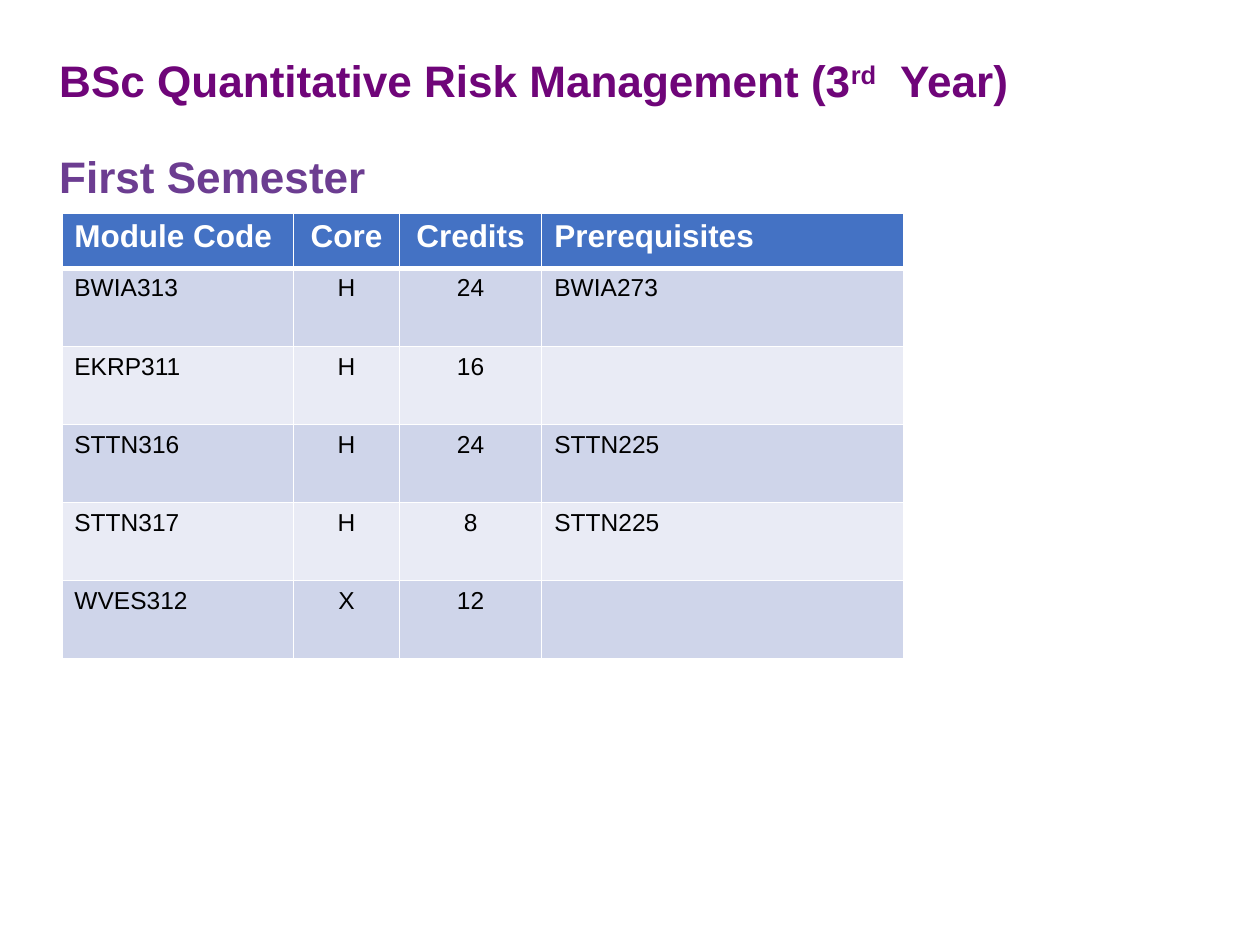
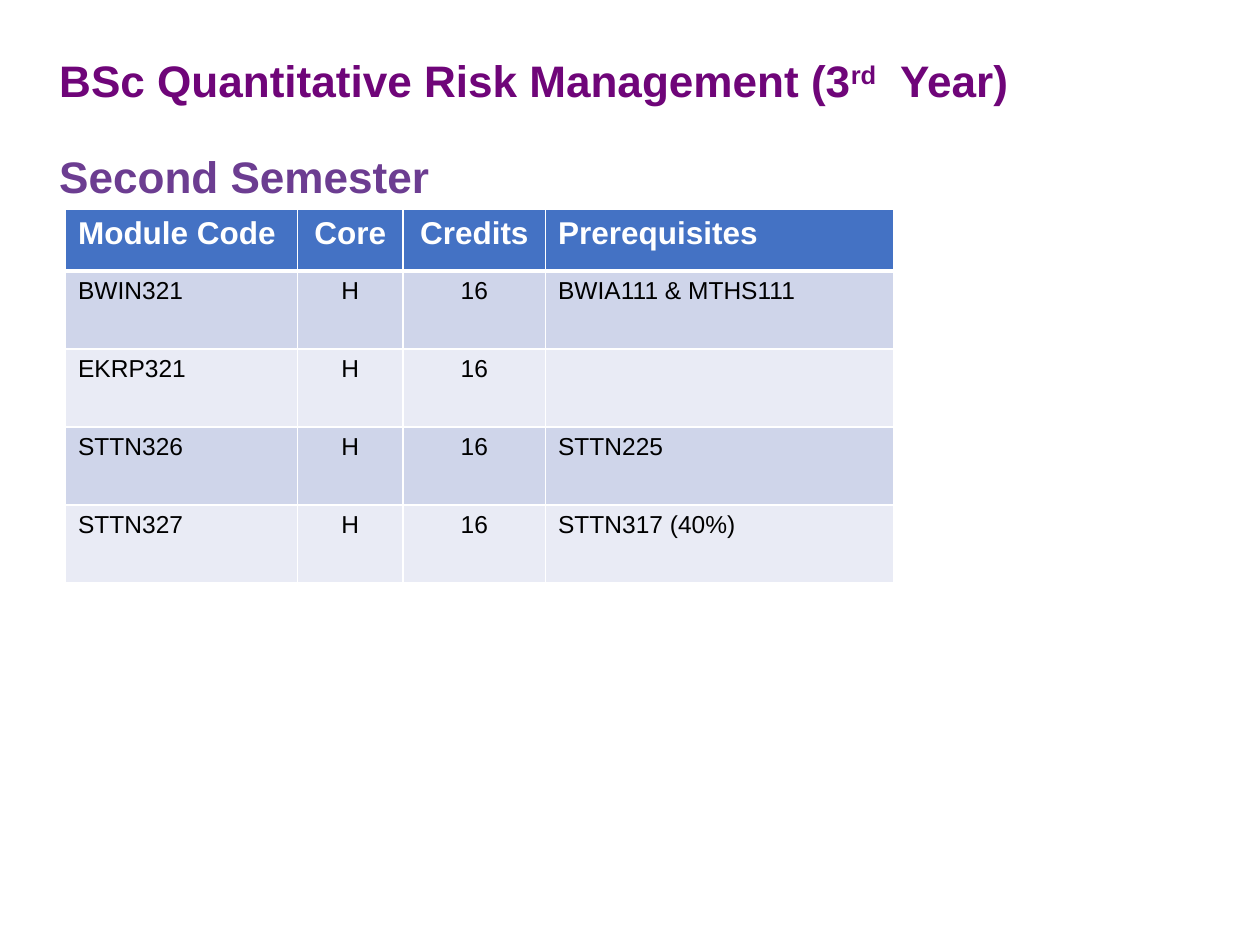
from dataclasses import dataclass

from lxml.etree import SubElement
from pptx import Presentation
from pptx.dml.color import RGBColor as Color
from pptx.enum.text import MSO_ANCHOR as Anchor, MSO_AUTO_SIZE as AutoSize, PP_ALIGN as Align
from pptx.oxml.ns import qn
from pptx.util import Inches, Pt


@dataclass(frozen=True)
class Theme:
    font: str = "Arial"
    title: str = "6F0579"
    semester: str = "6C3D91"
    header: str = "4472C4"
    bands: tuple = ("CFD5EA", "E9EBF5")
    white: str = "FFFFFF"
    black: str = "000000"
    title_size: float = 25.2
    header_size: int = 18
    body_size: int = 14
    rule: int = 1
    header_rule: int = 3


@dataclass(frozen=True)
class Box:
    left: float
    top: float
    width: float
    height: float

    def lengths(self):
        return [Inches(side) for side in (self.left, self.top, self.width, self.height)]


THEME = Theme()
TITLE_LAYOUT = 5
HEADINGS = ("Module Code", "Core", "Credits", "Prerequisites")
ALIGNMENTS = (Align.LEFT, Align.CENTER, Align.CENTER, Align.LEFT)
FIXED_WIDTHS = (1.84, 0.84, 1.13)
BODY_ROW = 0.62

FIRST_MODULES = (
    ("BWIA313", "H", "24", "BWIA273"),
    ("EKRP311", "H", "16", ""),
    ("STTN316", "H", "24", "STTN225"),
    ("STTN317", "H", "8", "STTN225"),
    ("WVES312", "X", "12", ""),
)
SECOND_MODULES = (
    ("BWIN321", "H", "16", "BWIA111 & MTHS111"),
    ("EKRP321", "H", "16", ""),
    ("STTN326", "H", "16", "STTN225"),
    ("STTN327", "H", "16", "STTN317 (40%)"),
)


def write(para, text, size, color, bold=False, align=Align.LEFT, raised=False):
    para.alignment = align
    span = para.add_run()
    span.text = text
    span.font.name = THEME.font
    span.font.size = Pt(size)
    span.font.bold = bold
    span.font.color.rgb = Color.from_string(color)
    if raised:
        span._r.get_or_add_rPr().set("baseline", "30000")


def set_borders(cell, bottom):
    properties = cell._tc.get_or_add_tcPr()
    widths = {"a:lnL": THEME.rule, "a:lnR": THEME.rule, "a:lnT": THEME.rule, "a:lnB": bottom}
    for position, (tag, width) in enumerate(widths.items()):
        line = SubElement(properties, qn(tag), w=str(Pt(width)))
        fill = SubElement(line, qn("a:solidFill"))
        SubElement(fill, qn("a:srgbClr"), val=THEME.white)
        properties.insert(position, line)


def add_title(page, box, semester):
    title = page.shapes.title
    title.left, title.top, title.width, title.height = box.lengths()
    frame = title.text_frame
    frame.word_wrap = True
    frame.auto_size = AutoSize.NONE
    frame.vertical_anchor = Anchor.TOP
    frame.margin_top = Inches(0.07)
    course, term = frame.paragraphs[0], frame.add_paragraph()
    for text, raised in (("BSc Quantitative Risk Management (3", False), ("rd", True), ("  Year)", False)):
        write(course, text, THEME.title_size, THEME.title, bold=True, raised=raised)
    write(term, semester, THEME.title_size, THEME.semester, bold=True)
    term.space_before = Pt(28)
    for para in (course, term):
        para.line_spacing = 0.9


def add_module_table(page, box, modules):
    rows = (HEADINGS, *modules)
    table = page.shapes.add_table(len(rows), len(HEADINGS), *box.lengths()).table
    widths = (*FIXED_WIDTHS, box.width - sum(FIXED_WIDTHS))
    for column, width in zip(table.columns, widths):
        column.width = Inches(width)
    header_height = box.height - BODY_ROW * len(modules)
    for number, values in enumerate(rows):
        is_header = number == 0
        table.rows[number].height = Inches(header_height if is_header else BODY_ROW)
        fill = THEME.header if is_header else THEME.bands[(number - 1) % 2]
        size = THEME.header_size if is_header else THEME.body_size
        color = THEME.white if is_header else THEME.black
        for cell, value, align in zip(table.rows[number].cells, values, ALIGNMENTS):
            cell.fill.solid()
            cell.fill.fore_color.rgb = Color.from_string(fill)
            set_borders(cell, THEME.header_rule if is_header else THEME.rule)
            if value:
                write(cell.text_frame.paragraphs[0], value, size, color, bold=is_header, align=align)


def add_semester_page(deck, semester, title_box, table_box, modules):
    page = deck.slides.add_slide(deck.slide_layouts[TITLE_LAYOUT])
    add_title(page, title_box, semester)
    add_module_table(page, table_box, modules)


def main():
    deck = Presentation()
    deck.slide_width, deck.slide_height = Inches(10), Inches(7.5)
    add_semester_page(deck, "First Semester", Box(0.37, 0.4, 9.25, 0.61),
                      Box(0.49, 1.69, 6.68, 3.54), FIRST_MODULES)
    add_semester_page(deck, "Second Semester", Box(0.37, 0.4, 9.25, 0.57),
                      Box(0.52, 1.66, 6.57, 2.97), SECOND_MODULES)
    deck.save("out.pptx")


if __name__ == "__main__":
    main()
